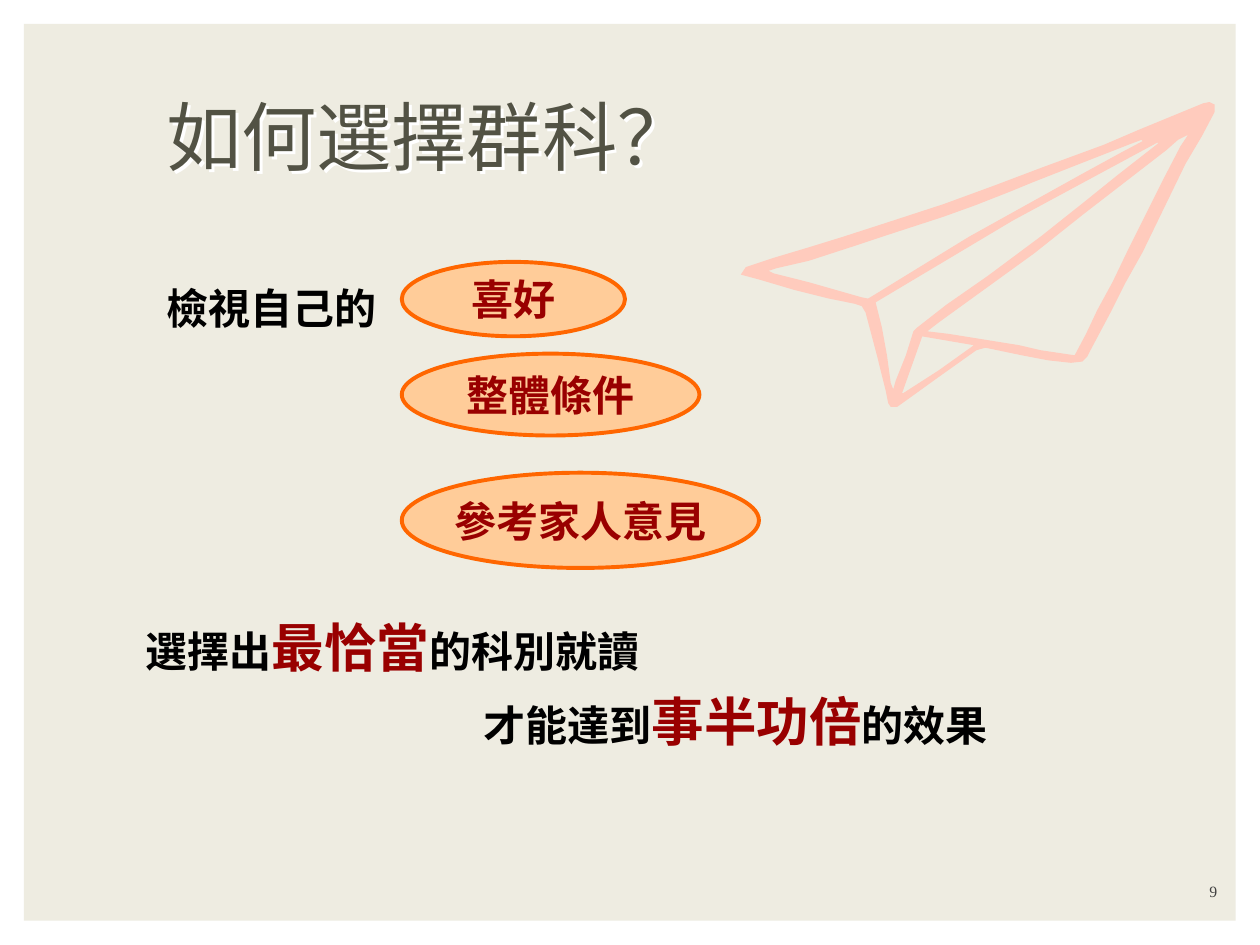
from lxml import etree
from pptx import Presentation
from pptx.dml.color import RGBColor
from pptx.enum.shapes import MSO_SHAPE
from pptx.enum.text import MSO_ANCHOR, PP_ALIGN
from pptx.oxml.ns import qn
from pptx.util import Cm, Pt

RECTANGLE, OVAL = MSO_SHAPE.RECTANGLE, MSO_SHAPE.OVAL
TOP, MIDDLE, BOTTOM = MSO_ANCHOR.TOP, MSO_ANCHOR.MIDDLE, MSO_ANCHOR.BOTTOM
LEFT, CENTER, RIGHT = PP_ALIGN.LEFT, PP_ALIGN.CENTER, PP_ALIGN.RIGHT

CREAM = RGBColor(0xEE, 0xEC, 0xE1)
OLIVE = RGBColor(0x52, 0x52, 0x44)
GRAY = RGBColor(0x40, 0x40, 0x40)
BLACK = RGBColor(0, 0, 0)
DARK_RED = RGBColor(0x99, 0, 0)
PEACH = RGBColor(0xFF, 0xCC, 0x99)
ORANGE = RGBColor(0xFF, 0x66, 0)
PINK = RGBColor(0xFF, 0xCB, 0xBD)

CJK_FONT = "Noto Sans CJK SC"
NUMBER_FONT = "Times New Roman"
BODY_SIZE, STRONG_SIZE = 24, 30

# Paper plane contours, in units of PLANE_UNIT on the slide
PLANE_UNIT = Cm(0.0254)
PLANE_OUTLINE = [
    (588, 218), (592, 212), (604, 208), (613, 205), (643, 196), (669, 188),
    (706, 176), (749, 162), (790, 147), (827, 133), (876, 115), (904, 103),
    (955, 82), (960, 81), (964, 83), (964, 89), (954, 108), (941, 130),
    (907, 200), (893, 225), (882, 247), (865, 279), (863, 283), (859, 287),
    (850, 288), (832, 286), (811, 282), (787, 277), (782, 276), (775, 278),
    (744, 300), (726, 313), (712, 323), (707, 323), (705, 320), (703, 310),
    (696, 282), (687, 248), (684, 243), (678, 241), (658, 237), (630, 230),
    (603, 222)]
RIGHT_WING = [
    (943, 107), (935, 111), (926, 119), (860, 170), (821, 201), (745, 256),
    (736, 263), (753, 265), (809, 274), (826, 278), (853, 282), (862, 265),
    (871, 246), (883, 224), (895, 199), (923, 143), (937, 116)]
LEFT_WING = [
    (610, 215), (614, 217), (642, 224), (684, 236), (689, 237), (694, 234),
    (769, 188), (841, 148), (859, 138), (890, 121), (907, 112), (906, 111),
    (898, 114), (852, 132), (819, 145), (802, 152), (774, 163), (749, 172),
    (703, 187), (682, 194), (642, 207), (616, 213)]
BODY_FOLD = [
    (695, 240), (700, 260), (704, 282), (707, 304), (709, 309), (711, 302),
    (719, 282), (725, 263), (728, 260), (751, 242), (784, 219), (827, 187),
    (861, 160), (887, 139), (919, 114), (919, 113), (804, 175)]
KEEL = [(716, 312), (717, 312), (745, 294), (773, 274), (732, 267)]


class SlideBuilder:
    def __init__(self, slide):
        self.slide = slide

    def fill_text(self, shape, runs, align=LEFT, anchor=TOP, bold=True, font=CJK_FONT):
        """Fill a shape with one paragraph of (text, size, colour) runs."""
        frame = shape.text_frame
        frame.vertical_anchor = anchor
        paragraph = frame.paragraphs[0]
        paragraph.alignment = align
        for text, size, color in runs:
            run = paragraph.add_run()
            run.text = text
            run.font.size = Pt(size)
            run.font.bold = bold
            run.font.color.rgb = color
            run.font.name = font
            east_asian = etree.SubElement(run.font._element, qn("a:ea"))
            east_asian.set("typeface", font)

    def text(self, box, runs, top_inset=0.13, **style):
        shape = self.slide.shapes.add_textbox(*map(Cm, box))
        shape.text_frame.word_wrap = True
        shape.text_frame.margin_top = Cm(top_inset)
        self.fill_text(shape, runs, **style)
        return shape

    def panel(self, box, color):
        shape = self.slide.shapes.add_shape(RECTANGLE, *map(Cm, box))
        self.paint(shape, color)

    def oval(self, box, label):
        shape = self.slide.shapes.add_shape(OVAL, *map(Cm, box))
        self.paint(shape, PEACH, ORANGE)
        shape.text_frame.word_wrap = False
        self.fill_text(shape, [(label, BODY_SIZE, DARK_RED)], CENTER, MIDDLE)

    def outline(self, contours, color):
        first, *holes = contours
        builder = self.slide.shapes.build_freeform(*first[0], scale=PLANE_UNIT)
        builder.add_line_segments(first[1:], close=True)
        for hole in holes:
            builder.move_to(*hole[0])
            builder.add_line_segments(hole[1:], close=True)
        self.paint(builder.convert_to_shape(), color)

    def paint(self, shape, fill, line=None):
        shape.shadow.inherit = False
        shape.fill.solid()
        shape.fill.fore_color.rgb = fill
        if line is None:
            shape.line.fill.background()
        else:
            shape.line.color.rgb = line
            shape.line.width = Pt(2.25)

    def white_shadow(self, shape):
        effects = etree.SubElement(shape._element.spPr, qn("a:effectLst"))
        shadow = etree.SubElement(effects, qn("a:outerShdw"), dist="30000",
                                  dir="2700000", algn="ctr", rotWithShape="0")
        etree.SubElement(shadow, qn("a:srgbClr"), val="FFFFFF")


def main():
    presentation = Presentation()
    presentation.slide_width = Cm(25.4)
    presentation.slide_height = Cm(19.05)
    slide = presentation.slides.add_slide(presentation.slide_layouts[6])
    builder = SlideBuilder(slide)

    # Background panel and page number
    builder.panel((0.48, 0.48, 24.43, 18.08), CREAM)
    builder.text((21.74, 17.53, 3.05, 0.76), [("9", 9, GRAY)], align=RIGHT,
                 anchor=BOTTOM, bold=False, font=NUMBER_FONT)

    # Things to review
    builder.text((3.1, 5.31, 8, 1.52), [("檢視自己的", BODY_SIZE, BLACK)], 0.38)
    for label, top, width, height in [("喜好", 5.28, 4.5, 1.5),
                                      ("整體條件", 7.13, 6, 1.65),
                                      ("參考家人意見", 9.53, 7.2, 1.92)]:
        builder.oval((8.1, top, width, height), label)

    # Conclusion
    for box, before, strong, after in [
            ((2.69, 11.94, 17.2, 1.85), "選擇出", "最恰當", "的科別就讀"),
            ((9.5, 13.44, 11.4, 1.85), "才能達到", "事半功倍", "的效果")]:
        builder.text(box, [(before, BODY_SIZE, BLACK),
                           (strong, STRONG_SIZE, DARK_RED),
                           (after, BODY_SIZE, BLACK)], 0.45)

    # Title
    title = builder.text((3.1, 1.68, 13.26, 2.08), [("如何選擇群科？", 43, OLIVE)],
                         anchor=MIDDLE, bold=False)
    builder.white_shadow(title)

    # Paper plane
    builder.outline([PLANE_OUTLINE, RIGHT_WING, LEFT_WING, BODY_FOLD, KEEL], PINK)

    presentation.save("out.pptx")


if __name__ == "__main__":
    main()
